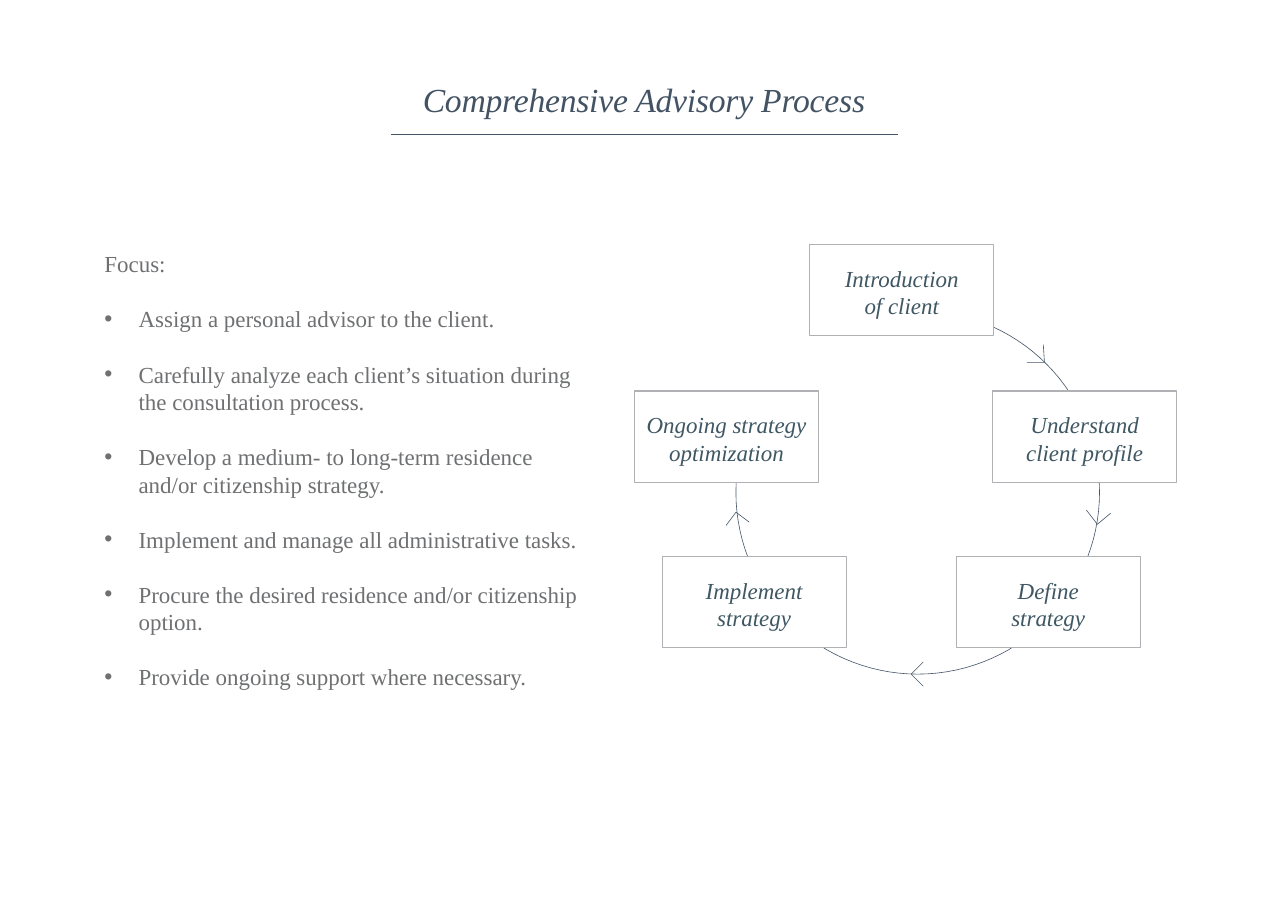
import math

import lxml.etree
import pptx
import pptx.dml.color
import pptx.enum.shapes
import pptx.enum.text
import pptx.oxml.ns
import pptx.util

Inches = pptx.util.Inches
Pt = pptx.util.Pt
RGBColor = pptx.dml.color.RGBColor
Align = pptx.enum.text.PP_ALIGN

FONT = "Times New Roman"
LINE_BLUE = RGBColor(0x44, 0x55, 0x67)
TITLE_BLUE = RGBColor(0x43, 0x53, 0x63)
LABEL_BLUE = RGBColor(0x3F, 0x57, 0x63)
BODY_GREY = RGBColor(0x6F, 0x70, 0x72)
BORDER_GREY = RGBColor(0xB1, 0xB0, 0xB4)
WHITE = RGBColor(0xFF, 0xFF, 0xFF)

TITLE = "Comprehensive Advisory Process"
FOCUS = [
    "Focus:",
    "Assign a personal advisor to the client.",
    "Carefully analyze each client’s situation during the consultation process.",
    "Develop a medium- to long-term residence and/or citizenship strategy.",
    "Implement and manage all administrative tasks.",
    "Procure the desired residence and/or citizenship option.",
    "Provide ongoing support where necessary.",
]
STEPS = [
    ("Introduction\nof client", 7.35, 2.22),
    ("Understand\nclient profile", 9.01, 3.55),
    ("Define\nstrategy", 8.68, 5.05),
    ("Implement\nstrategy", 6.01, 5.05),
    ("Ongoing strategy\noptimization", 5.76, 3.55),
]
STEP_WIDTH, STEP_HEIGHT = 1.67, 0.83
CYCLE_X, CYCLE_Y, CYCLE_RADIUS = 8.33, 4.47, 1.65
ARROWHEADS = [
    [(9.47, 3.13), (9.48, 3.29), (9.32, 3.29)],
    [(10.08, 4.66), (9.96, 4.76), (9.86, 4.63)],
    [(8.38, 6.23), (8.27, 6.12), (8.38, 6.01)],
    [(6.80, 4.74), (6.68, 4.65), (6.59, 4.77)],
]

deck = pptx.Presentation()
deck.slide_width, deck.slide_height = Inches(11.69), Inches(8.27)
page = deck.slides.add_slide(deck.slide_layouts[6])


def style_text(frame, size, color, italic, align):
    frame.word_wrap = True
    for para in frame.paragraphs:
        para.alignment = align
        for span in para.runs:
            span.font.name = FONT
            span.font.size = Pt(size)
            span.font.color.rgb = color
            span.font.italic = italic


def add_open_path(points):
    """Draw an unfilled thin line through points given in inches."""
    corners = [(Inches(x), Inches(y)) for x, y in points]
    builder = page.shapes.build_freeform(*corners[0])
    builder.add_line_segments(corners[1:], close=False)
    outline = builder.convert_to_shape()
    outline.shadow.inherit = False
    outline.fill.background()
    outline.line.color.rgb = LINE_BLUE
    outline.line.width = Pt(0.41)


# Title and rule
title_box = page.shapes.add_textbox(Inches(0), Inches(0.67), Inches(11.69), Inches(0.47))
title_box.text_frame.text = TITLE
style_text(title_box.text_frame, 22, TITLE_BLUE, True, Align.CENTER)
title_box.text_frame.paragraphs[0].runs[0].font._element.set("spc", "-14")

rule = page.shapes.add_connector(
    pptx.enum.shapes.MSO_CONNECTOR.STRAIGHT, Inches(3.55), Inches(1.22), Inches(8.15), Inches(1.22)
)
rule.line.color.rgb = LINE_BLUE
rule.line.width = Pt(0.5)
lxml.etree.SubElement(rule._element.spPr, pptx.oxml.ns.qn("a:effectLst"))

# Focus list
focus_box = page.shapes.add_textbox(Inches(0.85), Inches(2.22), Inches(4.5), Inches(4.14))
focus_box.text_frame.text = "\n".join(FOCUS)
style_text(focus_box.text_frame, 15, BODY_GREY, False, Align.LEFT)
for para in focus_box.text_frame.paragraphs:
    para.line_spacing = Pt(18)
    para.space_after = Pt(18)
for para in focus_box.text_frame.paragraphs[1:]:
    properties = para._p.get_or_add_pPr()
    properties.set("marL", str(Inches(0.31)))
    properties.set("indent", str(-Inches(0.31)))
    lxml.etree.SubElement(properties, pptx.oxml.ns.qn("a:buFont"), typeface="Arial")
    lxml.etree.SubElement(properties, pptx.oxml.ns.qn("a:buChar"), char="•")

# Cycle: an arc open between the last step and the first
arc = []
for degrees in range(207, -91, -3):
    angle = math.radians(degrees)
    arc.append((CYCLE_X + CYCLE_RADIUS * math.cos(angle), CYCLE_Y + CYCLE_RADIUS * math.sin(angle)))
for points in [arc] + ARROWHEADS:
    add_open_path(points)

for label, left, top in STEPS:
    step = page.shapes.add_shape(
        pptx.enum.shapes.MSO_SHAPE.RECTANGLE,
        Inches(left), Inches(top), Inches(STEP_WIDTH), Inches(STEP_HEIGHT),
    )
    step.shadow.inherit = False
    step.fill.solid()
    step.fill.fore_color.rgb = WHITE
    step.line.color.rgb = BORDER_GREY
    step.line.width = Pt(0.75)
    frame = step.text_frame
    frame.text = label
    frame.margin_left = frame.margin_right = Inches(0)
    frame.margin_top = Inches(0.08)
    frame.vertical_anchor = pptx.enum.text.MSO_ANCHOR.MIDDLE
    style_text(frame, 15, LABEL_BLUE, True, Align.CENTER)
    for para in frame.paragraphs:
        para.line_spacing = Pt(18)

deck.save("out.pptx")
